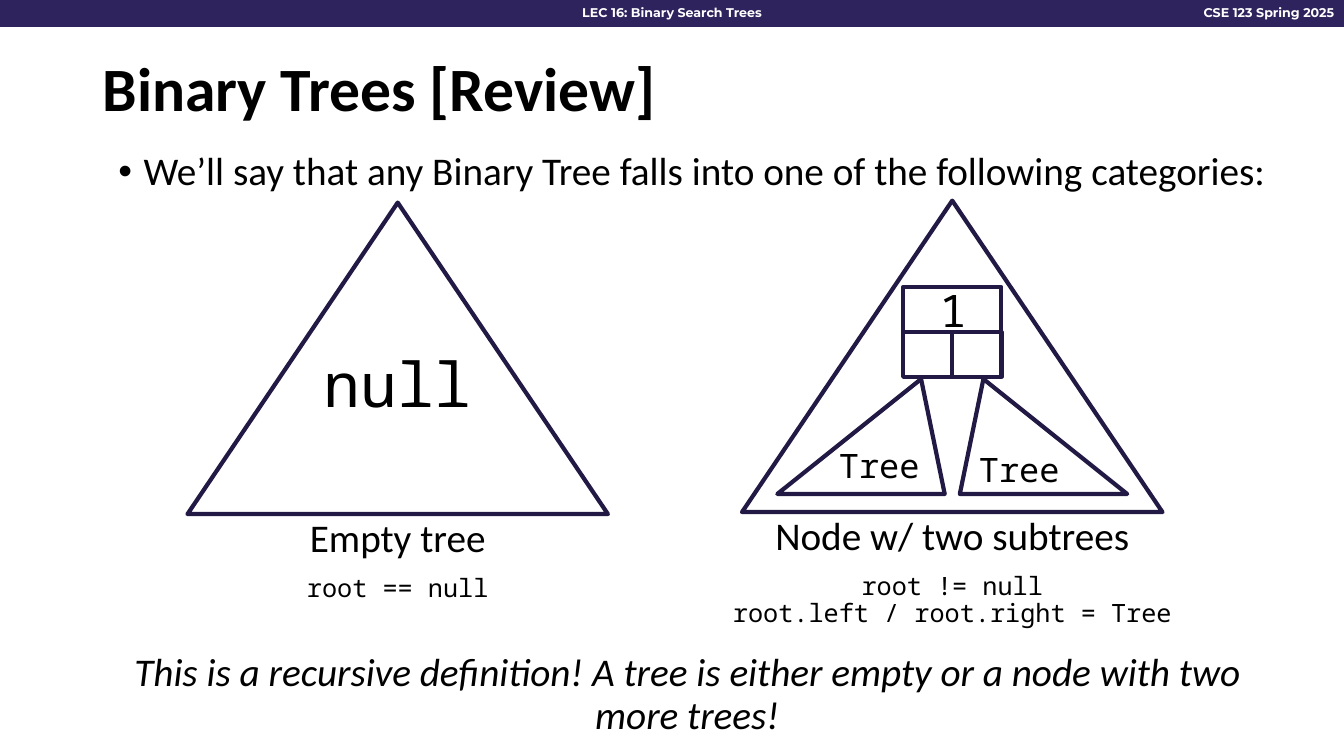
from lxml import etree
from pptx import Presentation
from pptx.dml.color import RGBColor
from pptx.enum.shapes import MSO_SHAPE
from pptx.enum.text import MSO_ANCHOR, PP_ALIGN
from pptx.oxml.ns import qn
from pptx.util import Inches, Pt

RECT, TRI = MSO_SHAPE.RECTANGLE, MSO_SHAPE.ISOSCELES_TRIANGLE
LEFT, MID, RIGHT = PP_ALIGN.LEFT, PP_ALIGN.CENTER, PP_ALIGN.RIGHT
CENTER = MSO_ANCHOR.MIDDLE
WIDE, HIGH = 13.33, 7.5
BAR, INK, BLACK, WHITE = "2E235D", "221A45", "000000", "FFFFFF"
SANS, MONO, HEAD = "Calibri", "Noto Sans Mono", "Montserrat"

# Text styles: font attributes
TITLE = dict(name=SANS, size=Pt(44), bold=True)
BODY = dict(name=SANS, size=Pt(28))
NOTE = dict(BODY, italic=True)
CODE = dict(name=MONO, size=Pt(18))
NULL = dict(name=MONO, size=Pt(44))
DATA = dict(name=MONO, size=Pt(32))
SUB = dict(name=MONO, size=Pt(24))
BAND = dict(name=HEAD, size=Pt(9), bold=True)

deck = Presentation()
deck.slide_width, deck.slide_height = Inches(WIDE), Inches(HIGH)
slide = deck.slides.add_slide(deck.slide_layouts[6])


def color(code):
    return RGBColor.from_string(code)


def part(box, x, y, w, h):
    """Box given as shares of a larger box."""
    left, top, wide, high = box
    return left + x * wide, top + y * high, w * wide, h * high


def draw(kind, box, line=INK, width=3, fill=None):
    shape = slide.shapes.add_shape(kind, *map(Inches, box))
    shape.shadow.inherit = False
    if fill:
        shape.fill.solid()
        shape.fill.fore_color.rgb = color(fill)
    else:
        shape.fill.background()
    shape.line.color.rgb = color(line)
    shape.line.width = Pt(width)
    return shape


def write(box, lines, align=MID, ink=BLACK, space=None, wrap=True):
    """Lines are (text, style, points before)."""
    frame = slide.shapes.add_textbox(*map(Inches, box)).text_frame
    frame.word_wrap = wrap
    for i, (text, style, gap) in enumerate(lines):
        para = frame.add_paragraph() if i else frame.paragraphs[0]
        para.alignment = align
        if space:
            para.line_spacing = space
        if gap:
            para.space_before = Pt(gap)
        run = para.add_run()
        run.text = text
        for key, value in style.items():
            setattr(run.font, key, value)
        run.font.color.rgb = color(ink)
    return frame


def bullet(para, indent):
    props = para._p.get_or_add_pPr()
    props.set("marL", str(Inches(indent)))
    props.set("indent", str(-Inches(indent)))
    etree.SubElement(props, qn("a:buFont")).set("typeface", "Arial")
    etree.SubElement(props, qn("a:buChar")).set("char", "•")


def header(box):
    draw(RECT, box, BAR, 1, BAR)
    write(part(box, 0.867, 0, 0.133, 1),
          [("CSE 123 Spring 2025", BAND, 0)], RIGHT, WHITE)
    write(part(box, 0.246, 0, 0.508, 1),
          [("LEC 16: Binary Search Trees", BAND, 0)], MID, WHITE)


def intro(box):
    frame = write(part(box, 0, 0, 0.96, 0.55),
                  [("Binary Trees [Review]", TITLE, 0)], LEFT, space=0.9)
    frame.vertical_anchor = CENTER
    frame = write(part(box, 0.013, 0.64, 0.987, 0.36),
                  [("We’ll say that any Binary Tree falls into one of "
                    "the following categories:", BODY, 0)], LEFT, space=0.9)
    bullet(frame.paragraphs[0], 0.25)


def tree(box, label, codes):
    """Large triangle with its caption below."""
    draw(TRI, box)
    lines = [(label, BODY, 0)]
    lines += [(code, CODE, 0 if i else 10) for i, code in enumerate(codes)]
    write(part(box, -0.08, 1, 1.16, 0.48), lines, space=0.9)


def empty(box):
    tree(box, "Empty tree", ["root == null"])
    write(part(box, 0.18, 0.443, 0.64, 0.27), [("null", NULL, 0)])


def node(box):
    """Value cell above two link cells."""
    draw(RECT, part(box, 0, 0, 1, 0.5))
    write(part(box, 0.27, -0.11, 0.32, 0.48), [("1", DATA, 0)],
          LEFT, wrap=False)
    for col in range(2):
        draw(RECT, part(box, col / 2, 0.5, 0.5, 0.5))


def full(box):
    tree(box, "Node w/ two subtrees",
         ["root != null", "root.left / root.right = Tree"])
    node(part(box, 0.383, 0.278, 0.234, 0.288))
    # Subtrees: left edge, tip, label left and top
    for x, tip, left, top in ((0.084, 0.859, 0.055, 0.77),
                              (0.518, 0.141, 0.388, 0.78)):
        draw(TRI, part(box, x, 0.573, 0.398, 0.369)).adjustments[0] = tip
        write(part(box, left, top, 0.542, 0.16), [("Tree", SUB, 0)])


def closing(box):
    write(box, [("This is a recursive definition! A tree is either empty or "
                 "a node with two more trees!", NOTE, 0)], space=0.9)


header((0, 0, WIDE, 0.26))
intro((0.92, 0.5, 12, 1.5))
empty((1.86, 2.01, 4.17, 3.09))
full((7.36, 1.99, 4.17, 3.09))
closing((0.89, 6.43, 11.85, 1.05))
deck.save("out.pptx")
